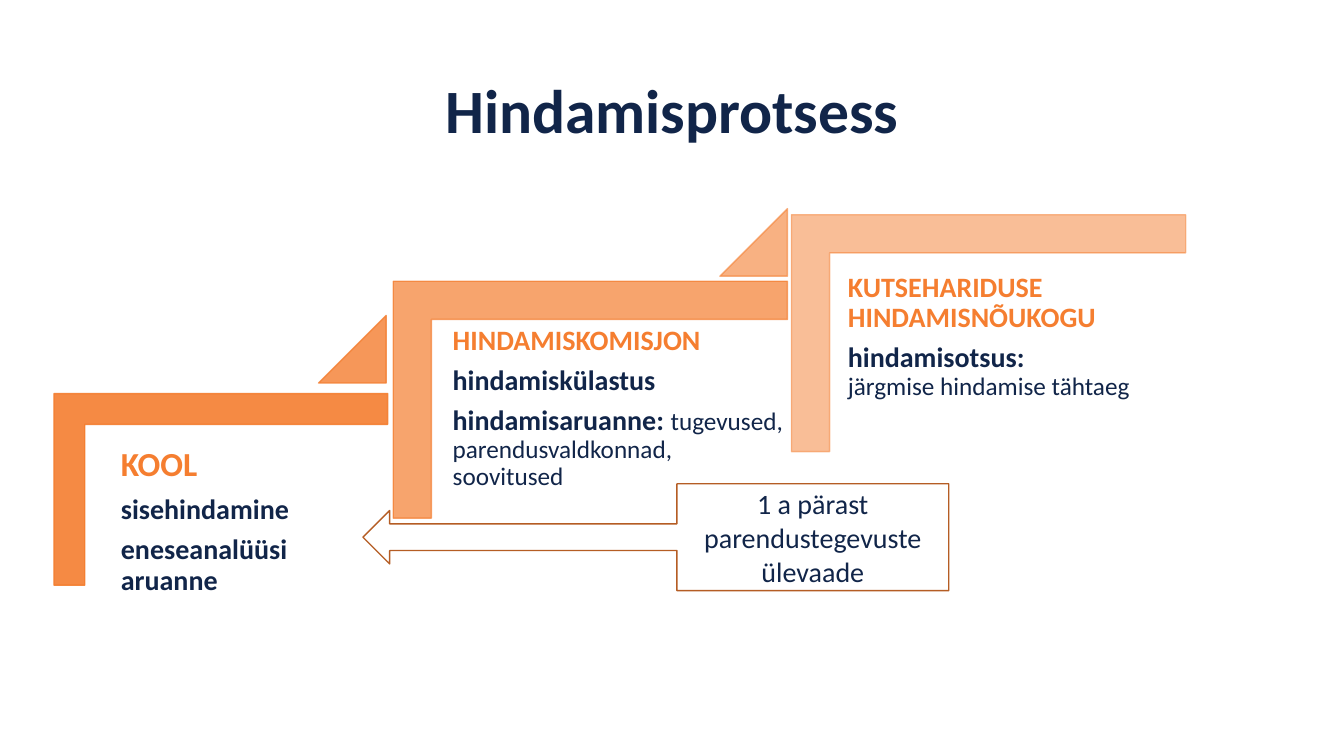
from lxml import etree
from pptx import Presentation
from pptx.dml.color import RGBColor
from pptx.enum.shapes import MSO_SHAPE
from pptx.enum.text import MSO_ANCHOR, PP_ALIGN
from pptx.oxml.ns import qn
from pptx.util import Pt

CORNER = MSO_SHAPE.CORNER
TRIANGLE = MSO_SHAPE.ISOSCELES_TRIANGLE
CALLOUT = MSO_SHAPE.LEFT_ARROW_CALLOUT
MIDDLE = MSO_ANCHOR.MIDDLE
CENTER = PP_ALIGN.CENTER

NAVY = RGBColor(0x11, 0x25, 0x49)
ORANGE = RGBColor(0xF4, 0x7E, 0x30)
HEADING = RGBColor(0xF5, 0x7E, 0x30)
BROWN = RGBColor(0xB5, 0x5D, 0x24)
FONT = "Calibri"
EMU_PER_PX = 9144  # 100 px to the inch


def px(*lengths):
    return [length * EMU_PER_PX for length in lengths]


def style_font(font, size, color=NAVY, bold=False):
    font.name = FONT
    font.size = Pt(size)
    font.bold = bold
    font.color.rgb = color


def add_solid(page, kind, place, adjustments, opacity, rotation=0):
    """Orange shape whose fill and line share one opacity (percent)."""
    shape = page.shapes.add_shape(kind, *px(*place))
    shape.shadow.inherit = False
    shape.rotation = rotation
    for index, value in enumerate(adjustments):
        shape.adjustments[index] = value
    shape.fill.solid()
    shape.fill.fore_color.rgb = ORANGE
    shape.line.color.rgb = ORANGE
    shape.line.width = Pt(1)
    for color in shape.element.spPr.iter(qn("a:srgbClr")):
        etree.SubElement(color, qn("a:alpha")).set("val", str(opacity * 1000))


def add_title(page, text):
    box = page.shapes.add_textbox(*px(92, 40, 1150, 145))
    frame = box.text_frame
    frame.word_wrap = True
    frame.vertical_anchor = MIDDLE
    para = frame.paragraphs[0]
    para.text = text
    para.alignment = CENTER
    para.line_spacing = 0.9
    style_font(para.font, 44, bold=True)


def add_step_text(page, place, inset, heading, heading_size, items):
    """Heading, then (bold label, plain detail) paragraphs."""
    frame = page.shapes.add_textbox(*px(*place)).text_frame
    frame.word_wrap = True
    margin, = px(inset)
    frame.margin_left = frame.margin_right = margin
    frame.margin_top = frame.margin_bottom = margin
    para = frame.paragraphs[0]
    para.text = heading
    para.line_spacing = 0.9
    para.space_after = Pt(heading_size * 0.35)
    style_font(para.font, heading_size, HEADING, True)
    for label, detail in items:
        para = frame.add_paragraph()
        para.line_spacing = 0.9
        para.space_after = Pt(7)
        style_font(para.font, 20, bold=True)
        para.add_run().text = label
        for index, line in enumerate(detail.split("\n")):
            if index:
                para.add_line_break()
            if line:
                span = para.add_run()
                span.text = line
                style_font(span.font, 18)


def add_callout(page, place, text):
    shape = page.shapes.add_shape(CALLOUT, *px(*place))
    shape.shadow.inherit = False
    for index, value in enumerate((0.25, 0.25, 0.25, 0.464)):
        shape.adjustments[index] = value
    shape.fill.background()
    shape.line.color.rgb = BROWN
    shape.line.width = Pt(1)
    frame = shape.text_frame
    frame.word_wrap = True
    frame.vertical_anchor = MIDDLE
    para = frame.paragraphs[0]
    para.text = text
    para.alignment = CENTER
    style_font(para.font, 20)


def main():
    deck = Presentation()
    deck.slide_width, deck.slide_height = px(1333, 750)
    page = deck.slides.add_slide(deck.slide_layouts[6])

    add_title(page, "Hindamisprotsess")

    # Staircase: corners and triangles fade from step to step
    corners = [(124, 320, 190, 331), (468, 201, 235, 391), (863, 135, 235, 391)]
    for step, place in enumerate(corners):
        add_solid(page, CORNER, place, (0.161, 0.161), 90 - 20 * step, 90)
    triangles = [(316, 313, 67, 67), (714, 207, 67, 67)]
    for step, place in enumerate(triangles):
        add_solid(page, TRIANGLE, place, (1,), 80 - 20 * step)

    # Step texts
    add_step_text(page, (110, 434, 272, 170), 10, "KOOL", 24, [
        ("sisehindamine", ""),
        ("eneseanalüüsi aruanne", ""),
    ])
    add_step_text(page, (441, 316, 382, 296), 8, "HINDAMISKOMISJON", 20, [
        ("hindamiskülastus", ""),
        ("hindamisaruanne: ", "tugevused, parendusvaldkonnad,\nsoovitused"),
    ])
    add_step_text(page, (833, 263, 404, 250), 8,
                  "KUTSEHARIDUSE HINDAMISNÕUKOGU", 20, [
        ("hindamisotsus:", "\njärgmise hindamise tähtaeg"),
    ])

    # Feedback arrow
    add_callout(page, (360, 480, 581, 106),
                "1 a pärast parendustegevuste ülevaade")

    deck.save("out.pptx")


if __name__ == "__main__":
    main()
